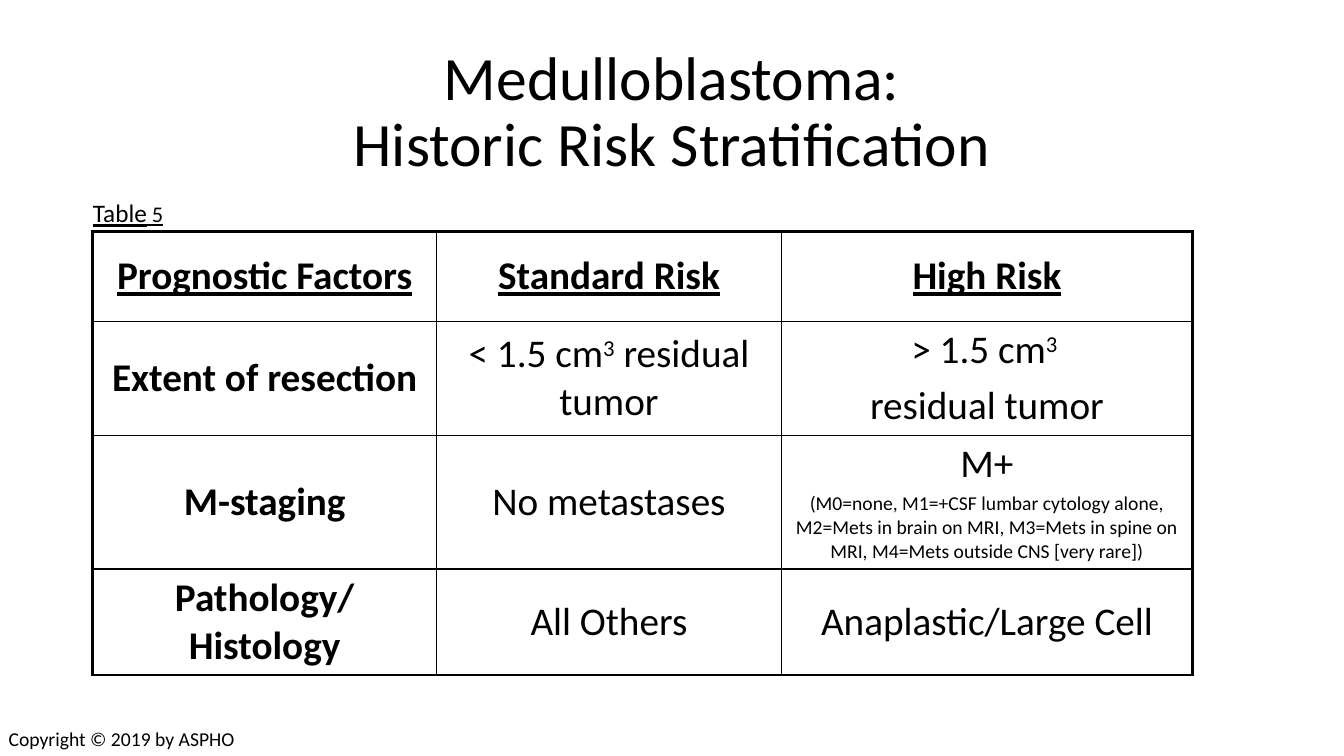
from lxml.etree import SubElement
from pptx import Presentation
from pptx.dml.color import RGBColor
from pptx.enum.text import MSO_ANCHOR as Anchor, PP_ALIGN as Align
from pptx.oxml.ns import qn
from pptx.util import Pt

COLORS = {"ink": "000000"}
FONT = "Calibri"
BODY, NOTE = 28, 14
THICK, THIN = 2.25, 1

TITLE = [["Medulloblastoma:", "\n", "Historic Risk Stratification"]]
CAPTION = [["Table", (" 5", {"size": 16})]]
COPYRIGHT = [["Copyright © 2019 by ASPHO"]]
CUBED = {"baseline": 30000}
STAGES = (
    "(M0=none, M1=+CSF lumbar cytology alone, M2=Mets in brain on MRI, "
    "M3=Mets in spine on MRI, M4=Mets outside CNS [very rare])"
)
RISK_ROWS = [
    [[["Prognostic Factors"]], [["Standard Risk"]], [["High Risk"]]],
    [
        [["Extent of resection"]],
        [["< 1.5 cm", ("3", CUBED), " residual tumor"]],
        [["> 1.5 cm", ("3 ", CUBED)], ["residual tumor"]],
    ],
    [
        [["M-staging"]],
        [["No metastases"]],
        [["M+"], [(STAGES, {"size": NOTE})]],
    ],
    [[["Pathology/Histology"]], [["All Others"]], [["Anaplastic/Large Cell"]]],
]
COLUMN_WIDTHS = [246, 246, 294]
ROW_HEIGHTS = [64, 81.4, 95.5, 75.5]
TABLE_LEFT, TABLE_TOP = 66, 165.6


def write(frame, content, size, align=Align.LEFT, line_spacing=None, **style):
    frame.word_wrap = True
    for index, runs in enumerate(content):
        paragraph = frame.paragraphs[0] if index == 0 else frame.add_paragraph()
        paragraph.alignment = align
        if line_spacing:
            paragraph.line_spacing = line_spacing
        for item in runs:
            text, changes = (item, {}) if isinstance(item, str) else item
            if text == "\n":
                paragraph.add_line_break()
                continue
            look = {"size": size, **style, **changes}
            run = paragraph.add_run()
            run.text = text
            run.font.name = FONT
            run.font.size = Pt(look["size"])
            run.font.bold = look.get("bold", False)
            run.font.underline = look.get("underline", False)
            run.font.color.rgb = RGBColor.from_string(COLORS["ink"])
            if "baseline" in look:
                run._r.get_or_add_rPr().set("baseline", str(look["baseline"]))
        if index:
            paragraph.space_before = Pt(0.2 * look["size"])


def add_label(slide, content, box, size, **style):
    label = slide.shapes.add_textbox(*map(Pt, box))
    write(label.text_frame, content, size, **style)


def set_borders(cell, widths):
    properties = cell._tc.get_or_add_tcPr()
    for side, width in widths.items():
        border = SubElement(properties, qn(f"a:ln{side}"), w=str(Pt(width)))
        fill = SubElement(border, qn("a:solidFill"))
        SubElement(fill, qn("a:srgbClr"), val=COLORS["ink"])


def add_risk_table(slide):
    last_row, last_column = len(ROW_HEIGHTS) - 1, len(COLUMN_WIDTHS) - 1
    box = (TABLE_LEFT, TABLE_TOP, sum(COLUMN_WIDTHS), sum(ROW_HEIGHTS))
    table = slide.shapes.add_table(
        len(ROW_HEIGHTS), len(COLUMN_WIDTHS), *map(Pt, box)
    ).table
    table.first_row = table.horz_banding = False
    for column, width in zip(table.columns, COLUMN_WIDTHS):
        column.width = Pt(width)
    for row, height in zip(table.rows, ROW_HEIGHTS):
        row.height = Pt(height)
    for r, factor in enumerate(RISK_ROWS):
        for c, content in enumerate(factor):
            cell = table.cell(r, c)
            cell.vertical_anchor = Anchor.MIDDLE
            outer = {"L": c == 0, "R": c == last_column,
                     "T": r == 0, "B": r == last_row}
            set_borders(cell, {s: THICK if o else THIN for s, o in outer.items()})
            cell.fill.background()
            write(cell.text_frame, content, BODY, align=Align.CENTER,
                  bold=r == 0 or c == 0, underline=r == 0)


def main():
    deck = Presentation()
    deck.slide_width, deck.slide_height = Pt(960), Pt(540)
    slide = deck.slides.add_slide(deck.slide_layouts[5])
    title = slide.shapes.title
    title.left, title.top, title.width, title.height = map(Pt, (66, 28.8, 828, 104.4))
    title.text_frame.vertical_anchor = Anchor.MIDDLE
    write(title.text_frame, TITLE, 44, align=Align.CENTER, line_spacing=0.9)
    add_risk_table(slide)
    add_label(slide, CAPTION, (59.3, 137.5, 142.6, 29), 18, underline=True)
    add_label(slide, COPYRIGHT, (-1, 515.5, 178.6, 24.5), NOTE)
    deck.save("out.pptx")


if __name__ == "__main__":
    main()
